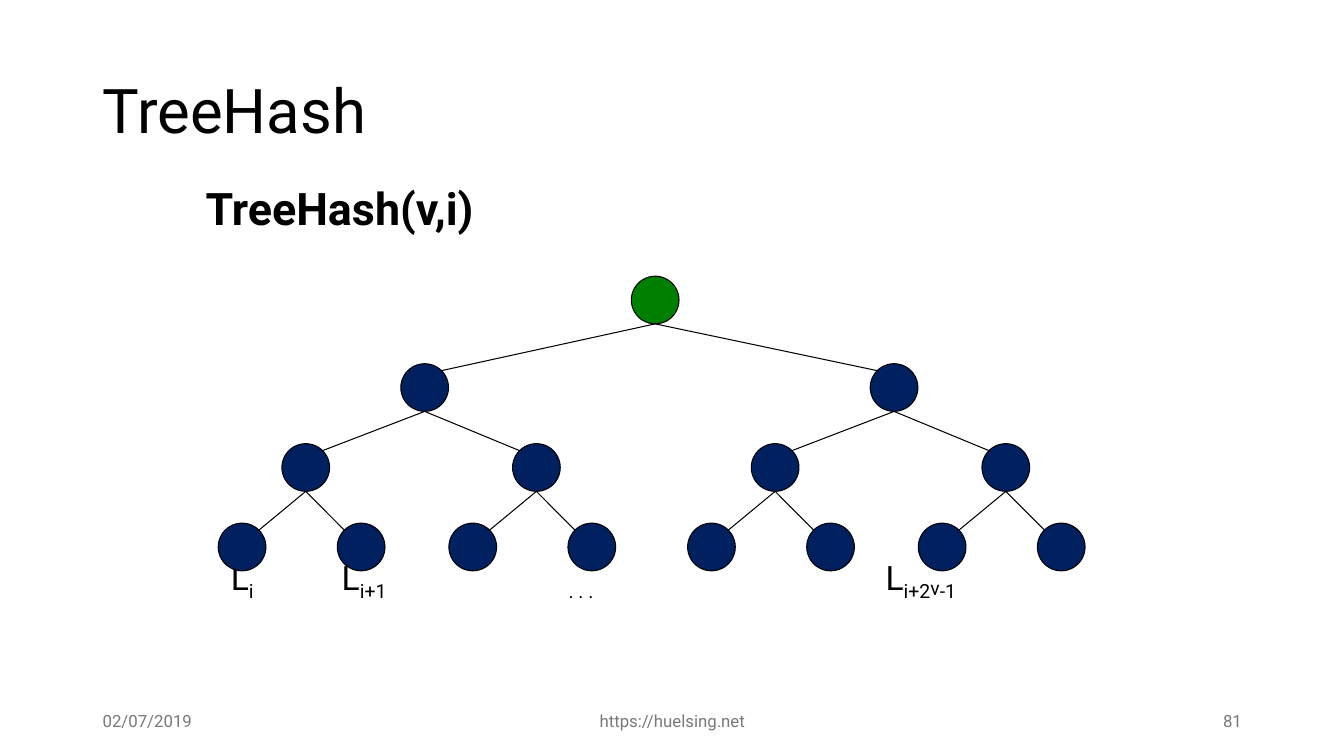
from lxml.etree import SubElement
from pptx import Presentation
from pptx.dml.color import RGBColor
from pptx.enum.shapes import MSO_CONNECTOR as Connector, MSO_SHAPE as Shape
from pptx.enum.text import MSO_ANCHOR as Anchor, MSO_AUTO_SIZE as AutoSize, PP_ALIGN as Align
from pptx.oxml.ns import qn
from pptx.util import Inches, Pt

FONT = "Roboto"
BLACK = RGBColor(0x00, 0x00, 0x00)
GRAY = RGBColor(0x79, 0x79, 0x79)
NAVY = RGBColor(0x00, 0x20, 0x60)
GREEN = RGBColor(0x00, 0x80, 0x00)

WIDTH, HEIGHT = Inches(13.33), Inches(7.5)
COLUMN, ROW = WIDTH / 80, HEIGHT / 45

RADIUS = 1.42
DIAGONAL = RADIUS * 0.71
LEVEL_ROWS = [17.86, 23.07, 27.83, 32.56]
CHILD_SHIFTS = [(-13.72, 14.22), (-7.08, 6.65), (-3.79, 3.3)]

LABEL_TABS = [6.6, 20.1, 38.97]
LEAF_LABELS = [
    ("L", 0), ("i", -25), ("\tL", 0), ("i+1", -25), ("\t. . .", -25),
    ("\tL", 0), ("i+2", -25), ("v", -14), ("-1", -25),
]


def columns(count):
    """Return a horizontal length in grid columns."""
    return round(count * COLUMN)


def rows(count):
    """Return a vertical length in grid rows."""
    return round(count * ROW)


def place(box, left, top, width, height):
    """Move a box to its place on the grid."""
    box.left, box.top = columns(left), rows(top)
    box.width, box.height = columns(width), rows(height)


def style_span(span, size, color=BLACK, bold=False):
    """Set the font of one run."""
    span.font.name, span.font.size = FONT, Pt(size)
    span.font.color.rgb, span.font.bold = color, bold


def write(box, text, size, color=BLACK, bold=False, align=Align.LEFT, anchor=Anchor.MIDDLE):
    """Fill a box with one formatted line of text."""
    frame = box.text_frame
    frame.text = text
    frame.word_wrap = True
    frame.auto_size = AutoSize.NONE
    frame.vertical_anchor = anchor
    para = frame.paragraphs[0]
    para.alignment = align
    style_span(para.runs[0], size, color, bold)
    return para


def write_heading(box, text):
    """Write a bold heading without bullet or indent."""
    para = write(box, text, 32, bold=True, anchor=Anchor.TOP)
    para.space_before = Pt(0)
    settings = para._p.get_or_add_pPr()
    settings.set("marL", "0")
    settings.set("indent", "0")
    SubElement(settings, qn("a:buNone"))


def add_text(page, area, text, size, **style):
    """Add a text box on the grid."""
    box = page.shapes.add_textbox(0, 0, 0, 0)
    place(box, *area)
    write(box, text, size, **style)


def add_leaf_labels(page):
    """Write the leaf names on one line, spaced by tab stops."""
    box = page.shapes.add_textbox(0, 0, 0, 0)
    place(box, 11.64, 10.44, 56.7, 29.52)
    frame = box.text_frame
    frame.word_wrap = True
    frame.vertical_anchor = Anchor.BOTTOM
    frame.margin_left, frame.margin_bottom = columns(2.1), rows(4.08)
    para = frame.paragraphs[0]
    for text, baseline in LEAF_LABELS:
        span = para.add_run()
        span.text = text
        style_span(span, 24)
        span.font._element.set("baseline", str(baseline * 1000))
    tabs = SubElement(para._p.get_or_add_pPr(), qn("a:tabLst"))
    for stop in LABEL_TABS:
        SubElement(tabs, qn("a:tab"), pos=str(columns(stop)), algn="l")


def add_node(page, center, level):
    """Draw one tree node as a circle."""
    node = page.shapes.add_shape(Shape.OVAL, 0, 0, 0, 0)
    place(node, center - RADIUS, LEVEL_ROWS[level] - RADIUS, 2 * RADIUS, 2 * RADIUS)
    node.shadow.inherit = False
    node.fill.solid()
    node.fill.fore_color.rgb = NAVY if level else GREEN
    node.line.color.rgb = BLACK
    node.line.width = Pt(0.75)


def add_edge(page, parent, child, level):
    """Draw the line from the bottom of a parent to the upper inner side of its child."""
    inward = DIAGONAL if child < parent else -DIAGONAL
    edge = page.shapes.add_connector(
        Connector.STRAIGHT,
        columns(parent), rows(LEVEL_ROWS[level] + RADIUS),
        columns(child + inward), rows(LEVEL_ROWS[level + 1] - DIAGONAL),
    )
    edge.line.color.rgb = BLACK
    edge.line.width = Pt(0.75)
    SubElement(edge._element.spPr, qn("a:effectLst"))


def add_tree(page, center, level=0):
    """Draw a node and, recursively, the subtrees below it."""
    add_node(page, center, level)
    if level < len(CHILD_SHIFTS):
        for shift in CHILD_SHIFTS[level]:
            add_edge(page, center, center + shift, level)
            add_tree(page, center + shift, level + 1)


def main():
    """Build the slide and save it."""
    deck = Presentation()
    deck.slide_width, deck.slide_height = WIDTH, HEIGHT
    page = deck.slides.add_slide(deck.slide_layouts[1])
    title, body = page.placeholders
    place(title, 5.52, 2.4, 69, 8.7)
    write(title, "TreeHash", 44).line_spacing = 0.9
    place(body, 11.64, 10.44, 22.26, 3.84)
    write_heading(body, "TreeHash(v,i)")
    add_leaf_labels(page)
    add_tree(page, 39)
    footers = [
        (5.52, 18, "02/07/2019", Align.LEFT),
        (26.52, 27, "https://huelsing.net", Align.CENTER),
        (56.52, 18, "81", Align.RIGHT),
    ]
    for left, width, text, align in footers:
        add_text(page, (left, 41.7, width, 2.4), text, 12, color=GRAY, align=align)
    deck.save("out.pptx")


if __name__ == "__main__":
    main()
